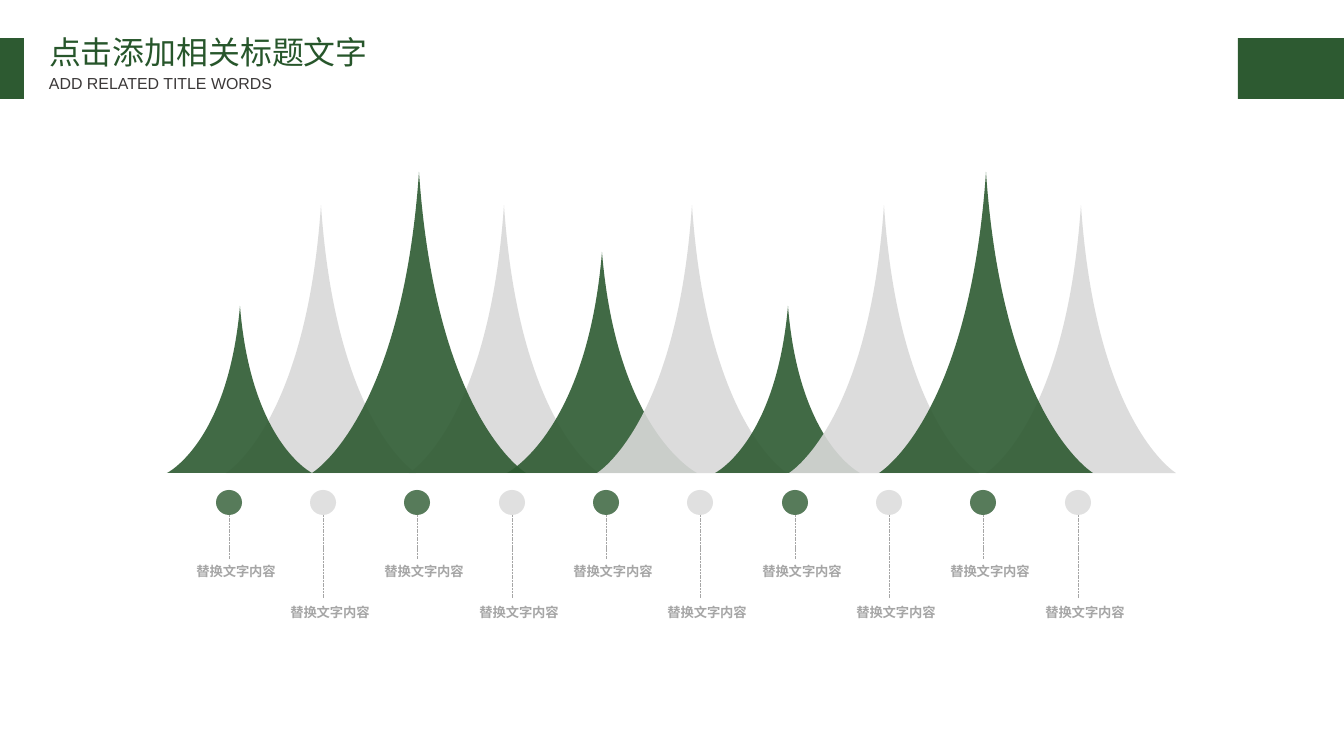
from pptx import Presentation
from pptx.dml.color import RGBColor
from pptx.enum.dml import MSO_LINE
from pptx.enum.shapes import MSO_CONNECTOR, MSO_SHAPE
from pptx.enum.text import MSO_AUTO_SIZE, PP_ALIGN
from pptx.oxml.ns import qn
from pptx.util import Pt
from lxml.etree import SubElement

PX = 9565  # EMU per px
COLORS = {
    "green": "2D5A31",
    "light": "D9D9D9",
    "label": "A6A6A6",
    "title": "27562B",
    "subtitle": "3B3838",
}


def paint(shape, color, opacity=100):
    """Give a shape a flat fill, no outline and no shadow."""
    shape.shadow.inherit = False
    shape.line.fill.background()
    shape.fill.solid()
    shape.fill.fore_color.rgb = RGBColor.from_string(COLORS[color])
    if opacity < 100:
        tint = shape._element.spPr.find(qn("a:solidFill"))[0]
        SubElement(tint, qn("a:alpha"), val=str(opacity * 1000))


def write(shapes, text, place, size, color, font="Arial", insets=(0, 0)):
    """Add a one-line text box and return its paragraph."""
    box = shapes.add_textbox(*(n * PX for n in place))
    frame = box.text_frame
    frame.word_wrap = False
    frame.auto_size = MSO_AUTO_SIZE.SHAPE_TO_FIT_TEXT
    frame.margin_left = frame.margin_right = insets[0] * PX
    frame.margin_top = frame.margin_bottom = insets[1] * PX
    para = frame.paragraphs[0]
    para.text = text
    para.font.name = font
    para.font.size = Pt(size)
    para.font.color.rgb = RGBColor.from_string(COLORS[color])
    SubElement(para._p.pPr.find(qn("a:defRPr")), qn("a:ea"), typeface="Noto Sans CJK SC")
    return para


deck = Presentation()
deck.slide_width = 1344 * PX
deck.slide_height = 756 * PX
page = deck.slides.add_slide(deck.slide_layouts[6])

# Peaks, back to front: left, width, height, color
BASE = 473
peaks = [
    (226, 190, 268, "light"),
    (409, 190, 268, "light"),
    (167, 145, 167, "green"),
    (312, 214, 301, "green"),
    (507, 190, 221, "green"),
    (597, 190, 268, "light"),
    (715, 145, 167, "green"),
    (789, 190, 268, "light"),
    (986, 190, 268, "light"),
    (879, 214, 301, "green"),
]
for left, width, height, color in peaks:
    # A triangle from the right foot over the tip to the left foot
    builder = page.shapes.build_freeform(left + width, BASE, scale=PX)
    builder.add_line_segments([(left + width / 2, BASE - height), (left, BASE)], close=True)
    peak = builder.convert_to_shape()
    paint(peak, color, 90)

    # Bend both sides inwards; control points are relative to the peak
    right_foot, left_foot = (width, height), (0, height)
    right_bend, left_bend = (0.58 * width, 0.82 * height), (0.42 * width, 0.82 * height)
    unit = peak.width / width if peak._element.find(".//" + qn("a:path")).get("w") == str(peak.width) else 1
    sides = list(peak._element.iter(qn("a:lnTo")))
    for side, controls in zip(sides, [(right_foot, right_bend), (left_bend, left_foot)]):
        side.tag = qn("a:cubicBezTo")
        for spot, (x, y) in enumerate(controls):
            control = SubElement(side, qn("a:pt"), x=str(round(x * unit)), y=str(round(y * unit)))
            side.insert(spot, control)

# Markers: dot, dashed stem and label, alternately short and long
MARKERS = 10
for index in range(MARKERS):
    center = 229 + 849 * index // (MARKERS - 1)
    color, stem_end, label_top = [("green", 559, 560), ("light", 598, 601)][index % 2]
    marker = page.shapes.add_group_shape().shapes

    dot = marker.add_shape(MSO_SHAPE.OVAL, (center - 13) * PX, 490 * PX, 26 * PX, 25 * PX)
    paint(dot, color, 80)

    stem = marker.add_connector(
        MSO_CONNECTOR.STRAIGHT, center * PX, 515 * PX, center * PX, stem_end * PX
    )
    stem.line.color.rgb = RGBColor.from_string(COLORS["label"])
    stem.line.width = Pt(0.5)
    stem.line.dash_style = MSO_LINE.SQUARE_DOT
    SubElement(stem._element.spPr, qn("a:effectLst"))

    label = write(marker, "替换文字内容", (center - 33, label_top, 80, 19), 10, "label")
    label.alignment = PP_ALIGN.CENTER
    label.line_spacing = 1.2
    label.font.bold = True

# Header
for left, width in [(0, 24), (1238, 106)]:
    bar = page.shapes.add_shape(MSO_SHAPE.RECTANGLE, left * PX, 38 * PX, width * PX, 61 * PX)
    paint(bar, "green")
write(page.shapes, "点击添加相关标题文字", (39, 28, 342, 49), 24, "title",
      "Noto Sans CJK SC", (10, 5))
write(page.shapes, "ADD RELATED TITLE WORDS", (39, 69, 246, 30), 12, "subtitle",
      insets=(10, 5))

deck.save("out.pptx")
